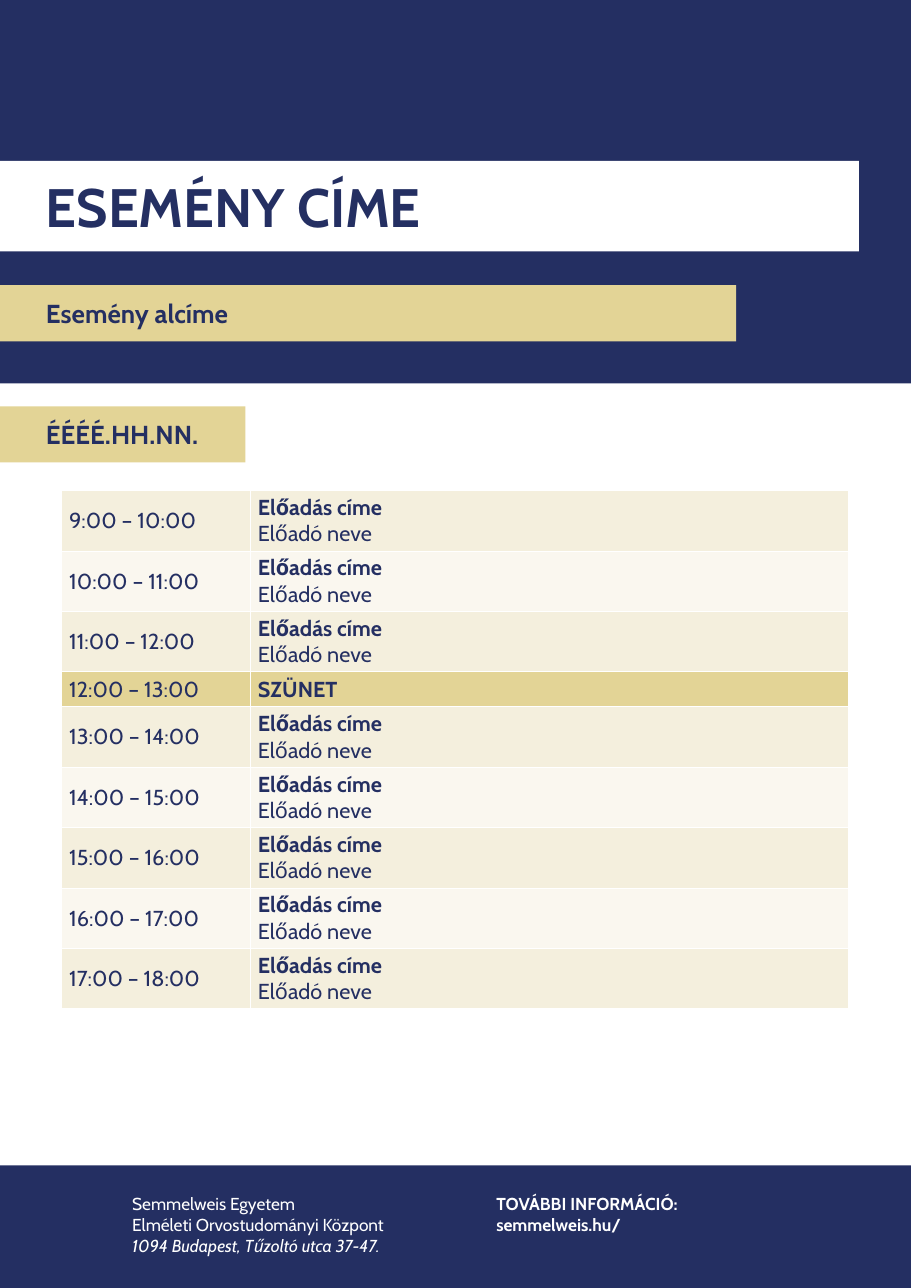
from dataclasses import dataclass

from lxml import etree
from pptx import Presentation
from pptx.dml.color import RGBColor
from pptx.enum import shapes, text
from pptx.oxml import ns
from pptx.shapes.autoshape import Shape
from pptx.slide import Slide
from pptx.table import _Cell
from pptx.text.text import TextFrame
from pptx.util import Cm, Pt

NAVY = RGBColor(0x24, 0x2F, 0x62)
GOLD = RGBColor(0xE3, 0xD4, 0x96)
CREAM = RGBColor(0xF4, 0xEF, 0xDD)
IVORY = RGBColor(0xFA, 0xF7, 0xEF)
WHITE = RGBColor(0xFF, 0xFF, 0xFF)
FONT = "Cabin"
PAGE_WIDTH, PAGE_HEIGHT = 29.7, 42.0


@dataclass(frozen=True)
class Line:
    words: str
    bold: bool = False
    italic: bool = False


@dataclass(frozen=True)
class Banner:
    words: str
    top: float
    width: float
    height: float
    fill: RGBColor
    size: int


@dataclass(frozen=True)
class FooterNote:
    left: float
    width: float
    height: float
    lines: tuple[Line, ...]


@dataclass(frozen=True)
class Session:
    start: int
    lines: tuple[Line, ...]
    fill: RGBColor
    height: float


BANNERS = (
    Banner("ESEMÉNY CÍME", 5.25, 28.0, 2.95, WHITE, 50),
    Banner("Esemény alcíme", 9.3, 24.0, 1.83, GOLD, 24),
    Banner("ÉÉÉÉ.HH.NN.", 13.25, 8.0, 1.83, GOLD, 24),
)
FOOTER_NOTES = (
    FooterNote(4.06, 9.83, 2.41, (
        Line("Semmelweis Egyetem"),
        Line("Elméleti Orvostudományi Központ"),
        Line("1094 Budapest, Tűzoltó utca 37-47.", italic=True),
    )),
    FooterNote(15.93, 8.05, 1.83, (
        Line("TOVÁBBI INFORMÁCIÓ:", bold=True),
        Line("semmelweis.hu/", bold=True),
    )),
)
FIRST_HOUR, BREAK_HOUR, LAST_HOUR = 9, 12, 17
TALK = (Line("Előadás címe", bold=True), Line("Előadó neve"))
BREAK = (Line("SZÜNET", bold=True),)


def make_session(hour: int) -> Session:
    if hour == BREAK_HOUR:
        return Session(hour, BREAK, GOLD, 1.14)
    return Session(hour, TALK, CREAM if hour % 2 else IVORY, 1.97)


def write(frame: TextFrame, lines: tuple[Line, ...], *, size: int,
          color: RGBColor) -> None:
    """Fill a text frame with one left-aligned paragraph per line."""
    for index, line in enumerate(lines):
        para = frame.add_paragraph() if index else frame.paragraphs[0]
        para.alignment = text.PP_ALIGN.LEFT
        span = para.add_run()
        span.text = line.words
        span.font.name = FONT
        span.font.size = Pt(size)
        span.font.bold = line.bold
        span.font.italic = line.italic
        span.font.color.rgb = color


def add_band(page: Slide, top: float, width: float, height: float,
             fill: RGBColor) -> Shape:
    """Add a plain rectangle that starts at the left page edge."""
    band = page.shapes.add_shape(shapes.MSO_SHAPE.RECTANGLE, Cm(0), Cm(top),
                                 Cm(width), Cm(height))
    band.shadow.inherit = False
    band.fill.solid()
    band.fill.fore_color.rgb = fill
    band.line.fill.background()
    return band


def add_banner(page: Slide, banner: Banner) -> None:
    band = add_band(page, banner.top, banner.width, banner.height, banner.fill)
    frame = band.text_frame
    frame.word_wrap = True
    frame.vertical_anchor = text.MSO_ANCHOR.TOP
    frame.margin_left, frame.margin_right = Cm(1.5), Cm(0.5)
    frame.margin_top = frame.margin_bottom = Cm(0.4)
    write(frame, (Line(banner.words, bold=True),), size=banner.size, color=NAVY)


def add_footer_note(page: Slide, note: FooterNote) -> None:
    box = page.shapes.add_textbox(Cm(note.left), Cm(38.79), Cm(note.width),
                                  Cm(note.height))
    box.text_frame.word_wrap = True
    write(box.text_frame, note.lines, size=16, color=WHITE)


def set_borders(cell: _Cell, color: RGBColor) -> None:
    """Put a one-point line on all four sides of a cell."""
    properties = cell._tc.get_or_add_tcPr()
    for index, side in enumerate(("lnL", "lnR", "lnT", "lnB")):
        edge = etree.Element(ns.qn(f"a:{side}"), w=str(Pt(1)))
        fill = etree.SubElement(edge, ns.qn("a:solidFill"))
        etree.SubElement(fill, ns.qn("a:srgbClr"), val=str(color))
        properties.insert(index, edge)


def add_programme(page: Slide, sessions: list[Session]) -> None:
    widths = (6.15, 19.5)
    height = sum(session.height for session in sessions)
    table = page.shapes.add_table(len(sessions), len(widths), Cm(2), Cm(16),
                                  Cm(sum(widths)), Cm(height)).table
    table.first_row = table.horz_banding = False
    for column, width in zip(table.columns, widths):
        column.width = Cm(width)
    for row, session in zip(table.rows, sessions):
        row.height = Cm(session.height)
        hours = Line(f"{session.start}:00 – {session.start + 1}:00")
        for cell, lines in zip(row.cells, ((hours,), session.lines)):
            cell.vertical_anchor = text.MSO_ANCHOR.MIDDLE
            cell.fill.solid()
            cell.fill.fore_color.rgb = session.fill
            set_borders(cell, WHITE)
            write(cell.text_frame, lines, size=20, color=NAVY)


def main() -> None:
    deck = Presentation()
    deck.slide_width, deck.slide_height = Cm(PAGE_WIDTH), Cm(PAGE_HEIGHT)
    page = deck.slides.add_slide(deck.slide_layouts[6])
    footer_top = 38.0
    add_band(page, footer_top, PAGE_WIDTH, PAGE_HEIGHT - footer_top, NAVY)
    add_band(page, 0, PAGE_WIDTH, 12.5, NAVY)
    for note in FOOTER_NOTES:
        add_footer_note(page, note)
    for banner in BANNERS:
        add_banner(page, banner)
    add_programme(page, [make_session(hour)
                         for hour in range(FIRST_HOUR, LAST_HOUR + 1)])
    deck.save("out.pptx")


if __name__ == "__main__":
    main()
